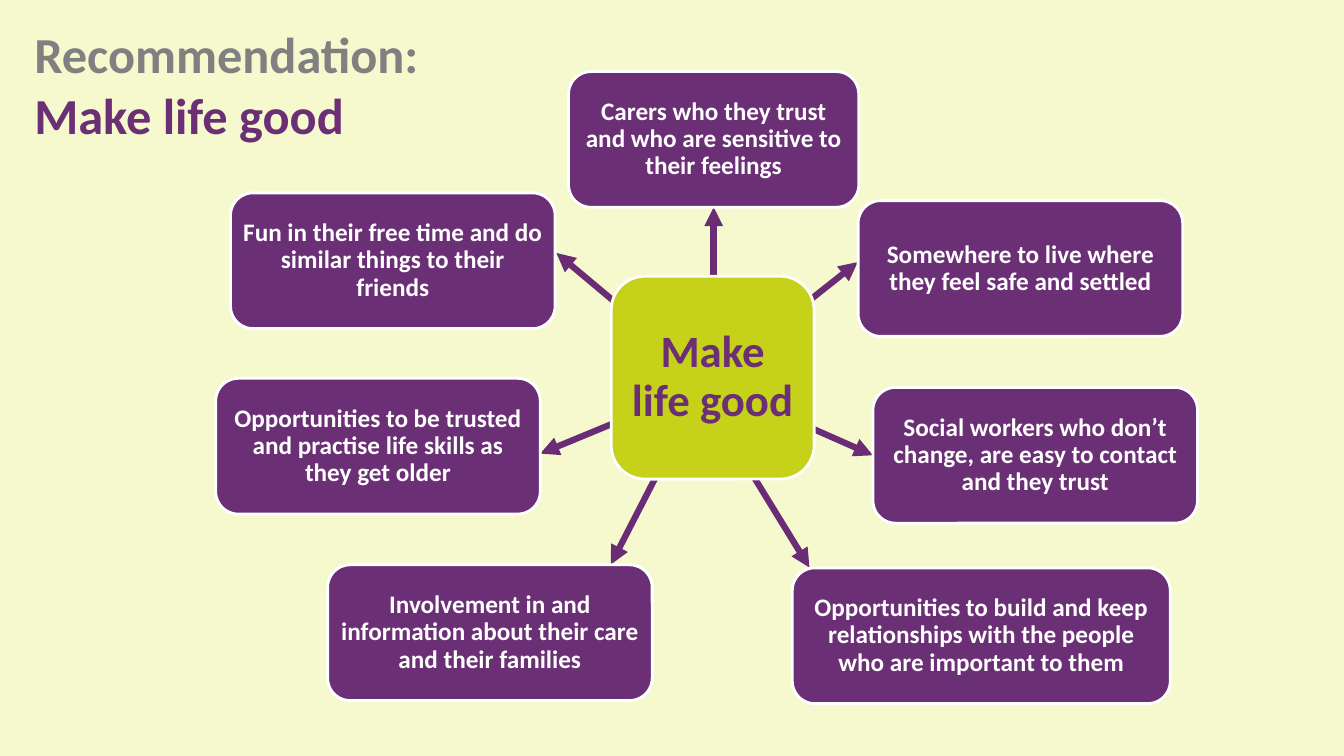
from lxml import etree
from pptx import Presentation
from pptx import util as u
from pptx.dml.color import RGBColor
from pptx.enum import shapes, text
from pptx.oxml.ns import qn

CREAM = RGBColor(0xF6, 0xF9, 0xCE)
GREY = RGBColor(0x80, 0x80, 0x80)
PURPLE = RGBColor(0x6B, 0x2F, 0x75)
ARROW_PURPLE = RGBColor(0x6A, 0x2C, 0x74)
LIME = RGBColor(0xC6, 0xD2, 0x19)
WHITE = RGBColor(0xFF, 0xFF, 0xFF)

COLUMNS, ROWS = 40, 22.5
NEED_WIDTH, NEED_HEIGHT = 9.66, 4.04
LEFT_SIDE, BOTTOM_SIDE = 1, 2

# Each need: wording, box left and top, box width, arrow start, arrow end, joined side
NEEDS = [
    ("Involvement in and information about their care and their families",
     (9.75, 16.81), NEED_WIDTH, (20.94, 11.43), (18.18, 16.8), None),
    ("Opportunities to build and keep relationships with the people who are important to them",
     (23.58, 16.9), 11.25, (20.85, 11.61), (24.09, 16.89), None),
    ("Opportunities to be trusted and practise life skills as they get older",
     (6.42, 11.26), NEED_WIDTH, (21.09, 11.43), (16.08, 13.5), None),
    ("Social workers who don’t change, are easy to contact and they trust",
     (25.98, 11.53), NEED_WIDTH, (21.18, 11.43), (25.98, 13.56), LEFT_SIDE),
    ("Fun in their free time and do similar things to their friends",
     (6.86, 5.74), NEED_WIDTH, (21, 11.25), (16.56, 7.53), None),
    ("Somewhere to live where they feel safe and settled",
     (25.54, 5.97), NEED_WIDTH, (21.18, 11.25), (25.53, 7.8), None),
    ("Carers who they trust and who are sensitive to their feelings",
     (16.92, 2.13), 8.64, (21.24, 11.31), (21.24, 6.27), BOTTOM_SIDE),
]


def write(paragraph, wording, *, size, color, align, spacing=1.0):
    paragraph.alignment = align
    paragraph.line_spacing = spacing
    run = paragraph.add_run()
    run.text = wording
    run.font.name = "Calibri"
    run.font.size = u.Pt(size)
    run.font.bold = True
    run.font.color.rgb = color


class Board:
    """Holds the style and the current slide; lengths are grid columns and rows."""

    def __init__(self, deck):
        self.column = deck.slide_width / COLUMNS
        self.row = deck.slide_height / ROWS
        self.slide = deck.slides.add_slide(deck.slide_layouts[5])
        self.slide.background.fill.solid()
        self.slide.background.fill.fore_color.rgb = CREAM

    def x(self, columns):
        return round(columns * self.column)

    def y(self, rows):
        return round(rows * self.row)

    def heading(self, left, top, width, height, lines):
        title = self.slide.shapes.title
        title.left, title.top = self.x(left), self.y(top)
        title.width, title.height = self.x(width), self.y(height)
        frame = title.text_frame
        frame.word_wrap = False
        frame.auto_size = text.MSO_AUTO_SIZE.NONE
        frame.vertical_anchor = text.MSO_ANCHOR.TOP
        for index, (wording, color) in enumerate(lines):
            paragraph = frame.add_paragraph() if index else frame.paragraphs[0]
            write(paragraph, wording, size=36, color=color, align=text.PP_ALIGN.LEFT)

    def box(self, left, top, width, height, wording, *, fill, color, size, inset):
        box = self.slide.shapes.add_shape(
            shapes.MSO_SHAPE.ROUNDED_RECTANGLE,
            self.x(left), self.y(top), self.x(width), self.y(height))
        box.shadow.inherit = False
        box.fill.solid()
        box.fill.fore_color.rgb = fill
        box.line.color.rgb = WHITE
        box.line.width = u.Pt(2)
        frame = box.text_frame
        frame.word_wrap = True
        frame.vertical_anchor = text.MSO_ANCHOR.MIDDLE
        frame.margin_left = frame.margin_right = self.x(inset)
        frame.margin_top = frame.margin_bottom = self.y(inset)
        write(frame.paragraphs[0], wording, size=size, color=color,
              align=text.PP_ALIGN.CENTER, spacing=0.9)
        return box

    def arrow(self, start, end):
        arrow = self.slide.shapes.add_connector(
            shapes.MSO_CONNECTOR.STRAIGHT,
            self.x(start[0]), self.y(start[1]), self.x(end[0]), self.y(end[1]))
        arrow.line.color.rgb = ARROW_PURPLE
        arrow.line.width = u.Pt(4.5)
        etree.SubElement(arrow.line._get_or_add_ln(), qn("a:tailEnd"), type="triangle")
        etree.SubElement(arrow._element.spPr, qn("a:effectLst"))
        return arrow


def main():
    deck = Presentation()
    deck.slide_width, deck.slide_height = u.Inches(13.33), u.Inches(7.5)
    board = Board(deck)

    # Heading
    board.heading(0.72, 0.54, 13.83, 3.93,
                  [("Recommendation:", GREY), ("Make life good", PURPLE)])

    # Arrows run behind the hub
    arrows = [board.arrow(start, end) for _, _, _, start, end, _ in NEEDS]

    # Hub
    board.box(18.19, 8.22, 6.04, 6.04, "Make life good",
              fill=LIME, color=PURPLE, size=32, inset=0.3)

    # Needs around the hub
    for arrow, (wording, (left, top), width, _, _, side) in zip(arrows, NEEDS):
        need = board.box(left, top, width, NEED_HEIGHT, wording,
                         fill=PURPLE, color=WHITE, size=18, inset=0.15)
        if side is not None:
            arrow.end_connect(need, side)

    deck.save("out.pptx")


if __name__ == "__main__":
    main()
